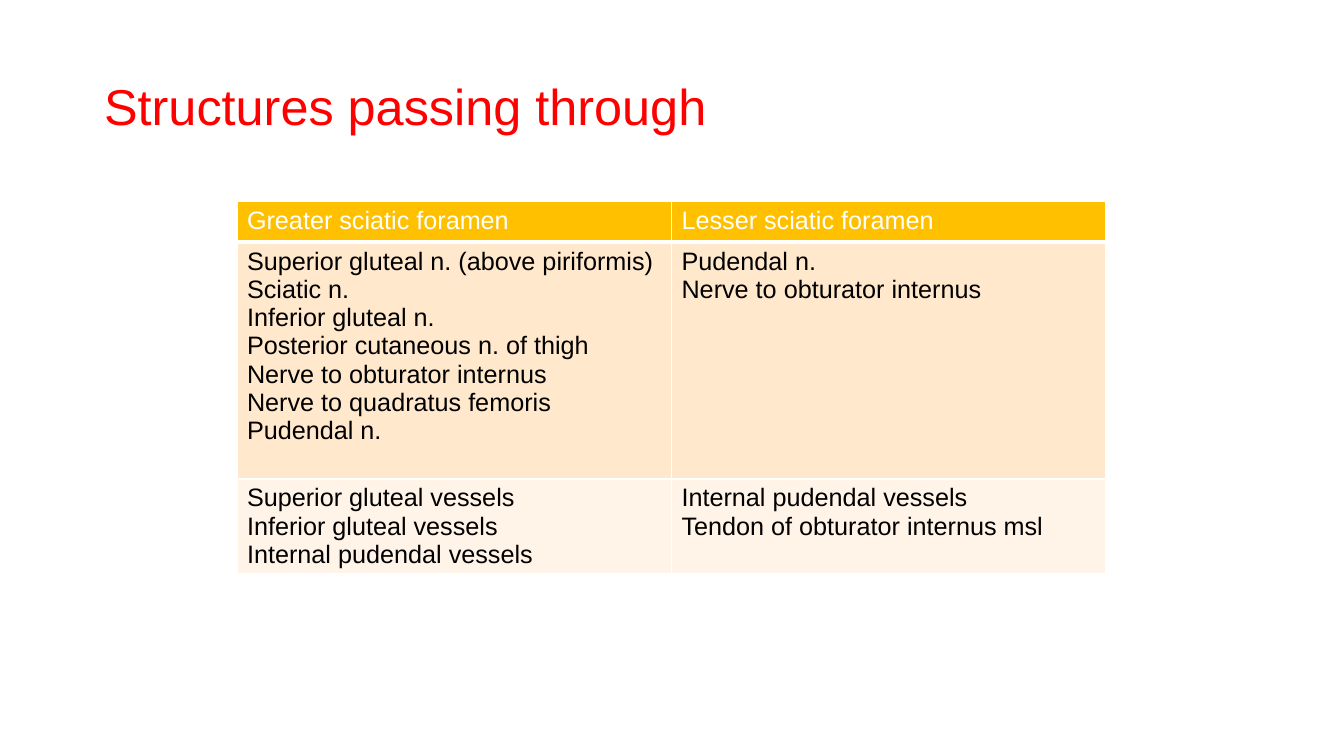
from lxml import etree
from pptx import Presentation
from pptx.dml.color import RGBColor
from pptx.enum.text import MSO_ANCHOR, PP_ALIGN
from pptx.oxml.ns import qn
from pptx.util import Inches, Pt

LEFT = PP_ALIGN.LEFT
MIDDLE = MSO_ANCHOR.MIDDLE
WIDTH, HEIGHT = Inches(13.33), Inches(7.5)
EDGES = ("L", "R", "T", "B")

HEADING = "Structures passing through"
FORAMINA = ["Greater sciatic foramen", "Lesser sciatic foramen"]
NERVES = [
    ["Superior gluteal n. (above piriformis)", "Sciatic n.", "Inferior gluteal n.",
     "Posterior cutaneous n. of thigh", "Nerve to obturator internus",
     "Nerve to quadratus femoris", "Pudendal n."],
    ["Pudendal n.", "Nerve to obturator internus"],
]
VESSELS = [
    ["Superior gluteal vessels", "Inferior gluteal vessels", "Internal pudendal vessels"],
    ["Internal pudendal vessels", "Tendon of obturator internus msl"],
]


def colour(code):
    """Turn a hex string into a colour."""
    return RGBColor.from_string(code)


class SlideBuilder:
    """Hold the style and the current slide."""

    font_name = "Arial"
    rule_colour = "FFFFFF"

    def __init__(self, deck):
        """Add a title-only slide to the deck."""
        self.slide = deck.slides.add_slide(deck.slide_layouts[5])

    def place(self, part, box):
        """Set a part's position from shares of the slide's size."""
        left, top, width, height = box
        frame = {"left": WIDTH * left, "top": HEIGHT * top,
                 "width": WIDTH * width, "height": HEIGHT * height}
        for name, length in frame.items():
            setattr(part, name, int(length))

    def set_lines(self, text_frame, lines, size, ink, spacing=1.0):
        """Set one left-aligned paragraph for each line."""
        text_frame.text = "\n".join(lines)
        for paragraph in text_frame.paragraphs:
            paragraph.alignment = LEFT
            paragraph.line_spacing = spacing
            font = paragraph.runs[0].font
            font.color.rgb = colour(ink)
            formats = {"name": self.font_name, "size": Pt(size), "bold": False}
            for name, value in formats.items():
                setattr(font, name, value)

    def title(self, wording, box):
        """Fill and place the title."""
        heading = self.slide.shapes.title
        self.place(heading, box)
        heading.text_frame.vertical_anchor = MIDDLE
        self.set_lines(heading.text_frame, [wording], 36, "FF0000", 0.9)

    def rule(self, cell, edge, points):
        """Draw one edge of a cell."""
        properties = cell._tc.get_or_add_tcPr()
        line = etree.SubElement(properties, qn(f"a:ln{edge}"), w=str(Pt(points)))
        paint = etree.SubElement(line, qn("a:solidFill"))
        etree.SubElement(paint, qn("a:srgbClr"), val=self.rule_colour)

    def table(self, bands, box):
        """Add a table from bands of height share, fill, ink, bottom rule and cells."""
        left, top, width, height = (
            int(share * side) for share, side in zip(box, (WIDTH, HEIGHT) * 2))
        grid = self.slide.shapes.add_table(
            len(bands), len(bands[0][-1]), left, top, width, height).table
        for row, (share, fill, ink, bottom, entries) in zip(grid.rows, bands):
            row.height = int(height * share)
            for cell, lines in zip(row.cells, entries):
                for edge in EDGES:
                    self.rule(cell, edge, bottom if edge == "B" else 1)
                cell.fill.solid()
                cell.fill.fore_color.rgb = colour(fill)
                self.set_lines(cell.text_frame, lines, 18, ink)


def main():
    """Build and save the slide."""
    deck = Presentation()
    deck.slide_width, deck.slide_height = WIDTH, HEIGHT
    builder = SlideBuilder(deck)
    builder.title(HEADING, (0.07, 0.05, 0.86, 0.19))
    bands = [
        (0.11, "FFC000", "FFFFFF", 3, [[foramen] for foramen in FORAMINA]),
        (0.64, "FFE8CC", "000000", 1, NERVES),
        (0.25, "FFF4E7", "000000", 1, VESSELS),
    ]
    builder.table(bands, (2.35 / 13.33, 2 / 7.5, 8.62 / 13.33, 3.67 / 7.5))
    deck.save("out.pptx")


if __name__ == "__main__":
    main()
